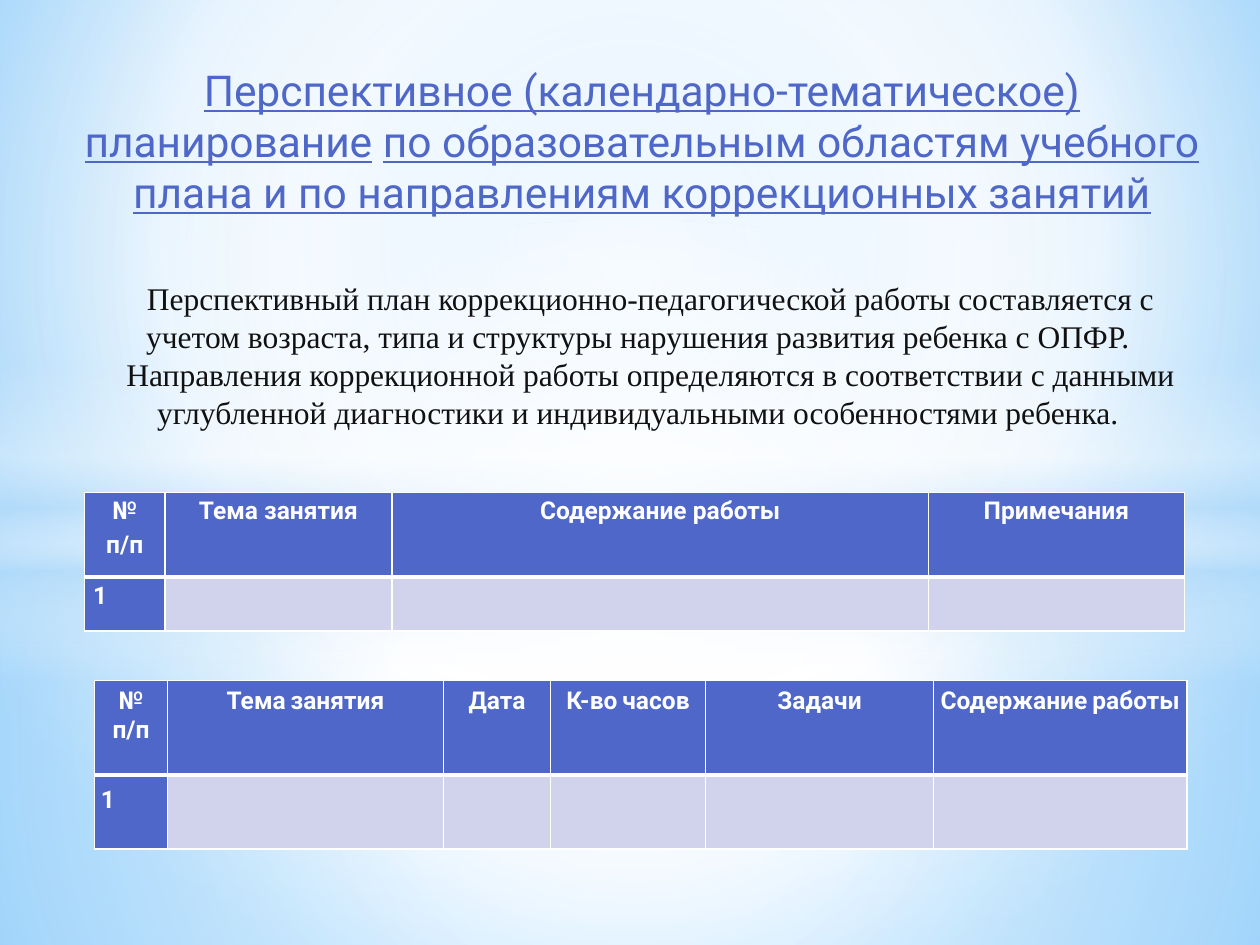
import lxml.etree
import pptx
import pptx.dml.color
import pptx.enum.shapes
import pptx.enum.text
import pptx.oxml.ns
import pptx.util

W, H = 10, 7.5
BLUE, PALE, WHITE, SKY, INK = "4E67C8", "D0D3EB", "FFFFFF", "B4DCFA", "111111"
ALIGN = pptx.enum.text.PP_ALIGN
SHAPE = pptx.enum.shapes.MSO_SHAPE
CENTRE = (50, 50, 50, 50)

TITLE = [("Перспективное (календарно-тематическое) планирование", True), (" ", False),
         ("по образовательным областям учебного плана и по направлениям "
          "коррекционных занятий", True)]
BODY = ["Перспективный план коррекционно-педагогической работы составляется с учетом "
        "возраста, типа и структуры нарушения развития ребенка с ОПФР.",
        "Направления коррекционной работы определяются в соответствии с данными "
        "углубленной диагностики и индивидуальными особенностями ребенка."]

# Top, height, shape and gradient of each full-width light band
BANDS = [
    (4.23, 3.27, SHAPE.RECTANGLE, CENTRE,
     [(0, WHITE, 91), (37, WHITE, 76), (100, SKY, 79)]),
    (0, 4.23, SHAPE.RECTANGLE, CENTRE,
     [(0, WHITE, 89), (48, WHITE, 62), (100, SKY, 79)]),
    (2.9, 2.5, SHAPE.RECTANGLE, None,
     [(0, WHITE, 0), (29, WHITE, 30), (45, SKY, 40), (55, WHITE, 26),
      (65, SKY, 60), (100, WHITE, 0)]),
    (1.75, 5.58, SHAPE.OVAL, CENTRE, [(0, WHITE, 100), (54, WHITE, 0)]),
]


def rgb(code):
    return pptx.dml.color.RGBColor.from_string(code)


def box(*lengths):
    return [pptx.util.Inches(v) for v in lengths]


def sub(parent, tag, **attrs):
    """Append a DrawingML child with the given attributes."""
    el = lxml.etree.SubElement(parent, pptx.oxml.ns.qn("a:" + tag))
    for name, value in attrs.items():
        el.set(name, str(value))
    return el


def set_gradient(fill, owner, stops, focus=None):
    """Circular gradient towards focus, or a vertical one without it."""
    fill.gradient()
    grad = owner.find(".//" + pptx.oxml.ns.qn("a:gradFill"))
    for child in list(grad):
        grad.remove(child)
    gs_list = sub(grad, "gsLst")
    for pos, color, alpha in stops:
        gs = sub(gs_list, "gs", pos=pos * 1000)
        sub(sub(gs, "srgbClr", val=color), "alpha", val=alpha * 1000)
    if focus:
        sides = {side: share * 1000 for side, share in zip("ltrb", focus)}
        sub(sub(grad, "path", path="circle"), "fillToRect", **sides)
    else:
        sub(grad, "lin", ang=90 * 60000, scaled=0)


def add_band(s, top, height, kind, focus, stops):
    sp = s.shapes.add_shape(kind, *box(0, top, W, height))
    sp.shadow.inherit = False
    sp.line.fill.background()
    set_gradient(sp.fill, sp._element, stops, focus)


def style(p, font, size, color, bold=False):
    p.font.name, p.font.size, p.font.bold = font, pptx.util.Pt(size), bold
    p.font.color.rgb = rgb(color)


def add_text(s, at, paragraphs, font, size, color, pitch, indent=0):
    """Centred text; each paragraph is a list of (text, underlined) runs."""
    tf = s.shapes.add_textbox(*box(*at)).text_frame
    tf.word_wrap = True
    tf.margin_top = tf.margin_bottom = 0
    for i, runs in enumerate(paragraphs):
        p = tf.add_paragraph() if i else tf.paragraphs[0]
        p.alignment, p.line_spacing = ALIGN.CENTER, pptx.util.Pt(pitch)
        p._p.get_or_add_pPr().set("indent", str(pptx.util.Inches(indent)))
        style(p, font, size, color)
        for text, underlined in runs:
            r = p.add_run()
            r.text, r.font.underline = text, underlined


def set_borders(cell, top, bottom):
    tc_pr = cell._tc.get_or_add_tcPr()
    for i, (side, width) in enumerate(zip("LRTB", (1, 1, top, bottom))):
        ln = sub(tc_pr, "ln" + side, w=pptx.util.Pt(width))
        sub(sub(ln, "solidFill"), "srgbClr", val=WHITE)
        tc_pr.insert(i, ln)


def fill_cell(cell, text, align, space_size, line_spacing, gaps):
    """Write bold white lines; the blanks between words have their own size."""
    for i, line in enumerate(text.split("\n")):
        p = cell.text_frame.add_paragraph() if i else cell.text_frame.paragraphs[0]
        p.alignment, p.line_spacing = align, line_spacing
        p.space_before, p.space_after = (pptx.util.Pt(v) for v in gaps)
        style(p, "Roboto", 14, WHITE, True)
        for j, word in enumerate(line.split()):
            if j:
                r = p.add_run()
                r.text, r.font.size = " ", pptx.util.Pt(space_size)
            p.add_run().text = word


def add_plan(s, left, top, cols, rows, heads, margins, first_align,
             space_size=14, head_spacing=1.0, gaps=(0, 0)):
    """Header row of themes over one numbered empty row."""
    at = box(left, top, sum(cols), sum(rows))
    table = s.shapes.add_table(len(rows), len(cols), *at).table
    table.horz_banding = False
    for col, width in zip(table.columns, cols):
        col.width = pptx.util.Inches(width)
    for row, height in zip(table.rows, rows):
        row.height = pptx.util.Inches(height)
    for i, texts in enumerate([heads, ["1"] + [""] * (len(cols) - 1)]):
        for j, text in enumerate(texts):
            cell = table.cell(i, j)
            cell.margin_left = cell.margin_right = pptx.util.Inches(margins[0])
            cell.margin_top = cell.margin_bottom = pptx.util.Inches(margins[1])
            cell.fill.solid()
            cell.fill.fore_color.rgb = rgb(BLUE if text else PALE)
            set_borders(cell, 3 if i else 1, 1 if i else 3)
            if text:
                fill_cell(cell, text, first_align if i else ALIGN.CENTER,
                          space_size, 1.15 if i else head_spacing, gaps)


def main():
    prs = pptx.Presentation()
    prs.slide_width, prs.slide_height = box(W, H)
    s = prs.slides.add_slide(prs.slide_layouts[6])
    set_gradient(s.background.fill, s._element,
                 [(0, "9ED5FF", 100), (60, WHITE, 100), (100, "5BB9FF", 100)],
                 (20, 10, 20, 60))
    for band in BANDS:
        add_band(s, *band)
    add_text(s, (0.55, 0.51, 9.09, 1.25), [TITLE], "Roboto", 24.3, BLUE, 29.1)
    add_text(s, (0.52, 2.21, 9.09, 1.25), [[(text, False)] for text in BODY],
             "Times New Roman", 18, INK, 21.8, indent=0.2)
    add_plan(s, 0.67, 3.91, [0.64, 1.8, 4.26, 2.03], [0.67, 0.43],
             ["№ п/п", "Тема занятия", "Содержание работы", "Примечания"],
             (0.07, 0), ALIGN.JUSTIFY, head_spacing=1.15, gaps=(7.5, 9))
    add_plan(s, 0.75, 5.4, [0.58, 2.19, 0.85, 1.23, 1.81, 2.01], [0.75, 0.59],
             ["№\nп/п", "Тема занятия", "Дата", "К-во часов", "Задачи",
              "Содержание работы"],
             (0.05, 0.05), ALIGN.LEFT, space_size=11)
    prs.save("out.pptx")


if __name__ == "__main__":
    main()
